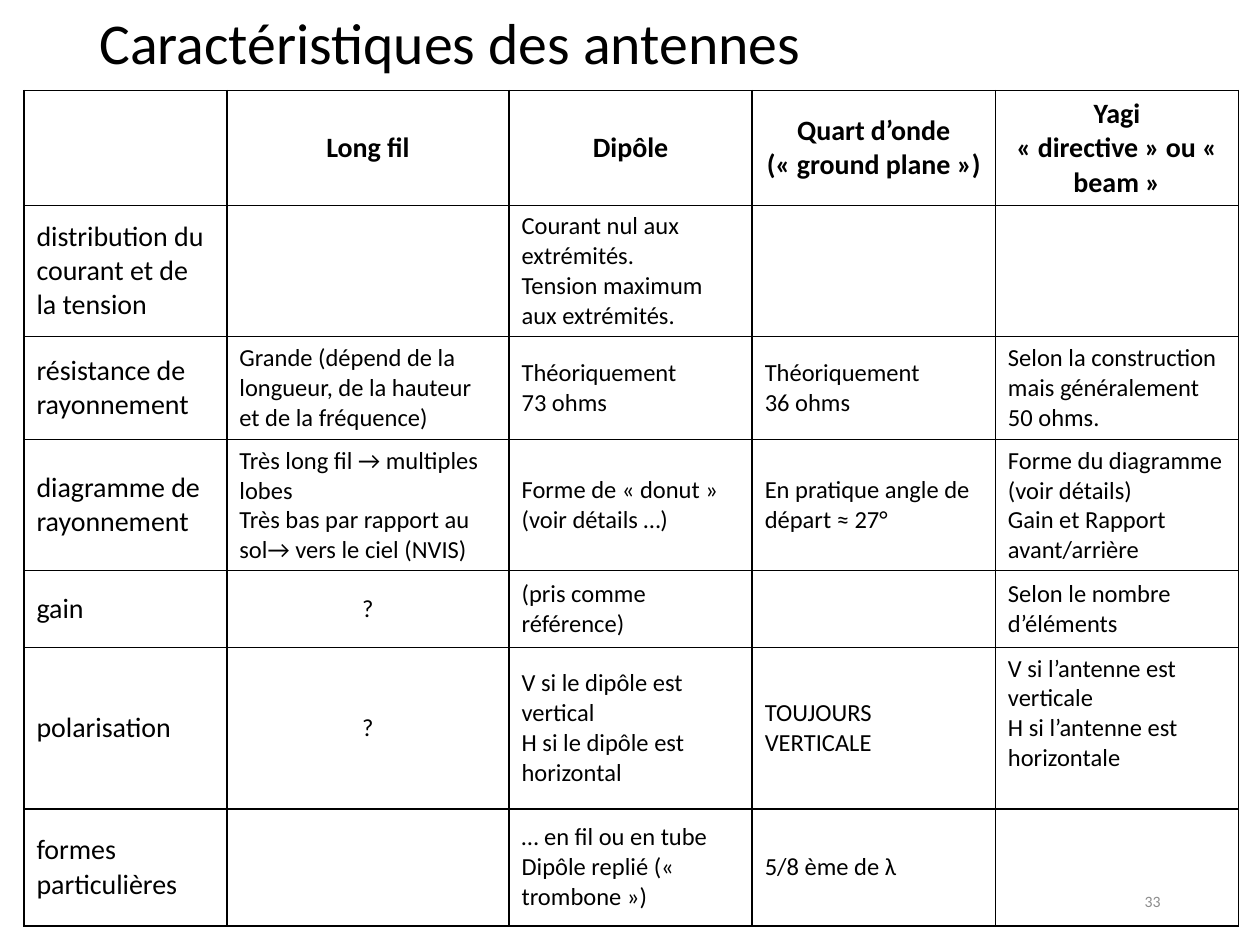
import pptx
import pptx.util
import pptx.dml.color
import pptx.enum.text
import pptx.oxml
import pptx.oxml.ns

Inches = pptx.util.Inches
Pt = pptx.util.Pt
RGBColor = pptx.dml.color.RGBColor
PP_ALIGN = pptx.enum.text.PP_ALIGN
MSO_ANCHOR = pptx.enum.text.MSO_ANCHOR

BLACK = RGBColor(0x00, 0x00, 0x00)
GRAY = RGBColor(0x8C, 0x8C, 0x8C)
FONT = "Calibri"

COL_WIDTHS = [1.61, 2.24, 1.93, 1.93, 1.93]
ROW_HEIGHTS = [0.91, 1.04, 0.82, 1.04, 0.61, 1.28, 0.93]
ROWS = [
    ["", "Long fil", "Dipôle", "Quart d’onde\n(« ground plane »)",
     "Yagi\n« directive » ou « beam »"],
    ["distribution du courant et de la tension", "",
     "Courant nul aux extrémités.\nTension maximum aux extrémités.", "", ""],
    ["résistance de\vrayonnement",
     "Grande (dépend de la longueur, de la hauteur et de la fréquence)",
     "Théoriquement \v73 ohms", "Théoriquement \v36 ohms",
     "Selon la construction mais généralement 50 ohms."],
    ["diagramme de rayonnement",
     "Très long fil → multiples lobes\nTrès bas par rapport au sol→ vers le ciel (NVIS)",
     "Forme de « donut »\n(voir détails …)",
     "En pratique angle de départ ≈ 27°",
     "Forme du diagramme\n(voir détails)\nGain et Rapport avant/arrière"],
    ["gain", "?", "(pris comme référence)", "", "Selon le nombre d’éléments"],
    ["polarisation", "?",
     "V si le dipôle est vertical\nH si le dipôle est\nhorizontal",
     "TOUJOURS VERTICALE",
     "V si l’antenne est verticale\nH si l’antenne est\nhorizontale"],
    ["formes particulières", "",
     "… en fil ou en tube\nDipôle replié (« trombone »)", "5/8 ème de λ", ""],
]


def write(tf, text, size, color, align, bold=False):
    tf.text = text
    tf.word_wrap = True
    for p in tf.paragraphs:
        p.alignment = align
        p.font.size = Pt(size)
        for r in p.runs:
            r.font.name = FONT
            r.font.size = Pt(size)
            r.font.bold = bold
            r.font.color.rgb = color


def add_borders(cell):
    tcPr = cell._tc.get_or_add_tcPr()
    for side in ("lnL", "lnR", "lnT", "lnB"):
        tcPr.append(pptx.oxml.parse_xml(
            f'<a:{side} {pptx.oxml.ns.nsdecls("a")} w="{Pt(1)}"><a:solidFill>'
            f'<a:srgbClr val="{BLACK}"/></a:solidFill></a:{side}>'))


prs = pptx.Presentation()
prs.slide_width = Inches(10)
prs.slide_height = Inches(7.5)
s = prs.slides.add_slide(prs.slide_layouts[6])

title = s.shapes.add_textbox(Inches(0.69), Inches(0.02), Inches(8.62), Inches(0.69))
write(title.text_frame, "Caractéristiques des antennes", 33, BLACK, PP_ALIGN.LEFT)
title.text_frame.vertical_anchor = MSO_ANCHOR.MIDDLE
title.text_frame.paragraphs[0].line_spacing = 0.9

number = s.shapes.add_textbox(Inches(7.06), Inches(6.95), Inches(2.25), Inches(0.4))
write(number.text_frame, "33", 9, GRAY, PP_ALIGN.RIGHT)
number.text_frame.vertical_anchor = MSO_ANCHOR.MIDDLE

table = s.shapes.add_table(len(ROWS), len(COL_WIDTHS), Inches(0.19), Inches(0.72),
                           Inches(sum(COL_WIDTHS)), Inches(sum(ROW_HEIGHTS))).table
table.first_row = False
table.horz_banding = False
for column, width in zip(table.columns, COL_WIDTHS):
    column.width = Inches(width)
for row, height in zip(table.rows, ROW_HEIGHTS):
    row.height = Inches(height)

for i, texts in enumerate(ROWS):
    for j, text in enumerate(texts):
        cell = table.cell(i, j)
        size = 16 if i == 0 or j == 0 else 14
        align = PP_ALIGN.CENTER if i == 0 or text == "?" else PP_ALIGN.LEFT
        write(cell.text_frame, text, size, BLACK, align, bold=i == 0)
        cell.vertical_anchor = MSO_ANCHOR.MIDDLE
        add_borders(cell)
        cell.fill.background()

table.cell(5, 4).vertical_anchor = MSO_ANCHOR.TOP

prs.save("out.pptx")
